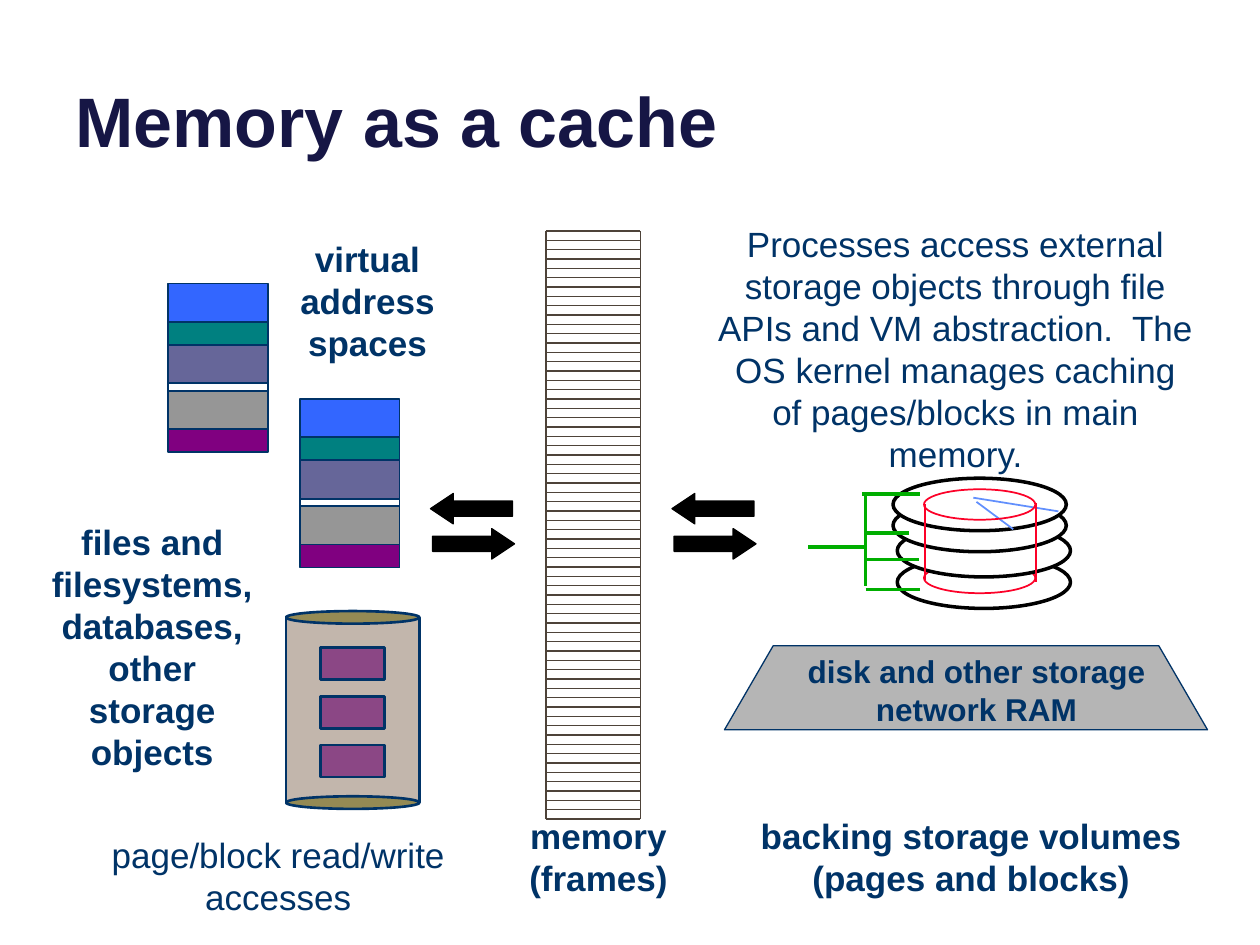
from pptx import Presentation
from pptx.dml.color import RGBColor
from pptx.enum.shapes import MSO_CONNECTOR as Connector, MSO_SHAPE as Shape
from pptx.enum.text import MSO_ANCHOR as Anchor, MSO_AUTO_SIZE as AutoSize, PP_ALIGN as Align
from pptx.oxml.ns import qn
from pptx.util import Inches, Pt
from lxml.etree import SubElement

COLUMNS, ROWS = 120, 90
NAVY, BLACK, WHITE = "003367", "000000", "FFFFFF"
FRAME_BROWN, RED, BLUE, GREEN = "4E4339", "FC0128", "618FFD", "00AE00"


def color(text):
    return RGBColor.from_string(text)


class Board:
    """Style and current slide; all positions are grid columns and rows."""

    font_name = "Arial"

    def __init__(self, deck):
        self.page = deck.slides.add_slide(deck.slide_layouts[5])
        self.column = deck.slide_width / COLUMNS
        self.row = deck.slide_height / ROWS

    def place(self, left, top, width, height):
        return (round(left * self.column), round(top * self.row),
                round(width * self.column), round(height * self.row))

    def fill_text(self, frame, lines, align, size, ink, bold):
        frame.text = "\n".join(lines)
        look = {"name": self.font_name, "size": Pt(size), "bold": bold}
        for para in frame.paragraphs:
            para.alignment = align
            for span in para.runs:
                for key, value in look.items():
                    setattr(span.font, key, value)
                span.font.color.rgb = color(ink)

    def title(self, text, *area):
        box = self.page.shapes.title
        for key, value in zip(("left", "top", "width", "height"), self.place(*area)):
            setattr(box, key, value)
        box.text_frame.vertical_anchor = Anchor.BOTTOM
        self.fill_text(box.text_frame, [text], Align.LEFT, 40, "161645", True)

    def label(self, lines, *area, size=20, bold=True):
        frame = self.page.shapes.add_textbox(*self.place(*area)).text_frame
        frame.word_wrap = True
        frame.auto_size = AutoSize.SHAPE_TO_FIT_TEXT
        self.fill_text(frame, lines, Align.CENTER, size, NAVY, bold)

    def shape(self, kind, *area, fill=None, line=NAVY, weight=1, adjust=()):
        box = self.page.shapes.add_shape(kind, *self.place(*area))
        box.shadow.inherit = False
        if fill:
            box.fill.solid()
            box.fill.fore_color.rgb = color(fill)
        else:
            box.fill.background()
        box.line.color.rgb = color(line)
        box.line.width = Pt(weight)
        for index, value in enumerate(adjust):
            box.adjustments[index] = value

    def line(self, x1, y1, x2, y2, ink, weight):
        ends = self.place(x1, y1, x2, y2)
        link = self.page.shapes.add_connector(Connector.STRAIGHT, *ends)
        link.line.color.rgb = color(ink)
        link.line.width = Pt(weight)
        SubElement(link._element.spPr, qn("a:effectLst"))


def draw_memory(board):
    left, right, top, bottom, frames = 52, 61, 22, 78, 63
    for index in range(frames + 1):
        y = top + (bottom - top) * index / frames
        board.line(left, y, right, y, FRAME_BROWN, 0.75)
    for x in (left, right):
        board.line(x, bottom, x, top, FRAME_BROWN, 0.75)
    board.label(["memory", "(frames)"], 47, 77, 20, 9.25)


def draw_address_space(board, left, top):
    unit = 0.73
    segments = (("3366FF", 5), ("008080", 3), ("666699", 5),
                (WHITE, 1), ("969696", 5), ("800080", 3))
    for fill, units in segments:
        board.shape(Shape.FLOWCHART_PROCESS, left, top, 9.5, units * unit, fill=fill)
        top += units * unit


def draw_file_store(board):
    left, top, width, height, rim = 27.25, 58.8, 12.7, 17.64, 1.2
    board.shape(Shape.RECTANGLE, left, top, width, height, fill="C2B6AC", weight=1.5)
    for y in (top, top + height):
        board.shape(Shape.OVAL, left, y - rim / 2, width, rim, fill="948A54", weight=1.5)
    for index in range(3):
        board.shape(Shape.RECTANGLE, 30.55, 61.7 + 4.62 * index, 6.1, 3.05,
                    fill="8B4785", weight=1.5)


def draw_disk(board):
    def platter(left, top):
        board.shape(Shape.OVAL, left, top, 16.5, 5, fill=WHITE, line=BLACK, weight=2)

    def track(top):
        board.shape(Shape.OVAL, 88, top, 10.6, 2.9, line=RED)

    platter(85.45, 52.95)
    track(53.6)
    for left, top in ((85.45, 49.95), (85.05, 47.55), (85.05, 45.55)):
        platter(left, top)
    board.line(93, 47.8, 96.5, 50.4, BLUE, 1)
    board.line(92.7, 47.4, 100.8, 48.7, BLUE, 1)
    track(46.6)
    board.line(88.1, 48, 88.1, 55.2, RED, 1)
    board.line(98.65, 47.9, 98.65, 55.4, RED, 1)

    spine = 82.45
    board.line(spine, 47.05, spine, 55.8, GREEN, 2)
    for start, end, y in ((82.1, 87.6, 47.05), (spine, 86.6, 50.75),
                          (spine, 87.5, 53.3), (spine, 87.6, 56.15),
                          (spine, 77, 52.1)):
        board.line(start, y, end, y, GREEN, 2)


def draw_transfer(board, left):
    """Pair of opposite arrows."""
    for kind, x, y in ((Shape.LEFT_ARROW, left, 47), (Shape.RIGHT_ARROW, left + 0.2, 50.35)):
        board.shape(kind, x, y, 7.8, 2.9, fill=BLACK, line=BLACK,
                    weight=0.75, adjust=(0.5, 0.75))


def main():
    deck = Presentation()
    deck.slide_width, deck.slide_height = Inches(10), Inches(7.5)
    board = Board(deck)

    board.title("Memory as a cache", 6, -4.4, 108, 20.4)
    draw_memory(board)
    draw_address_space(board, 16, 27)
    draw_address_space(board, 28.55, 38)
    draw_file_store(board)
    board.label(["virtual address spaces"], 27, 22, 16, 13.3)
    board.label(["files and filesystems,", "databases,", "other storage objects"],
                3, 49, 23, 25.4)
    board.shape(Shape.TRAPEZOID, 69, 61.5, 46, 8, fill="B5B5B5", weight=0.75,
                adjust=(0.58,))
    board.label(["disk and other storage", "network RAM"], 71, 61.5, 44, 8.5, size=18)
    board.label(["page/block read/write accesses"], 7, 78.75, 39, 9.25, bold=False)
    draw_disk(board)
    board.label(["backing storage volumes", "(pages and blocks)"], 71, 77, 43, 9.25)
    board.label(["Processes access external storage objects through file APIs and VM "
                 "abstraction.  The OS kernel manages caching of pages/blocks in main "
                 "memory."], 67, 20.6, 48, 21.4, bold=False)
    for left in (41, 64):
        draw_transfer(board, left)

    deck.save("out.pptx")


if __name__ == "__main__":
    main()
